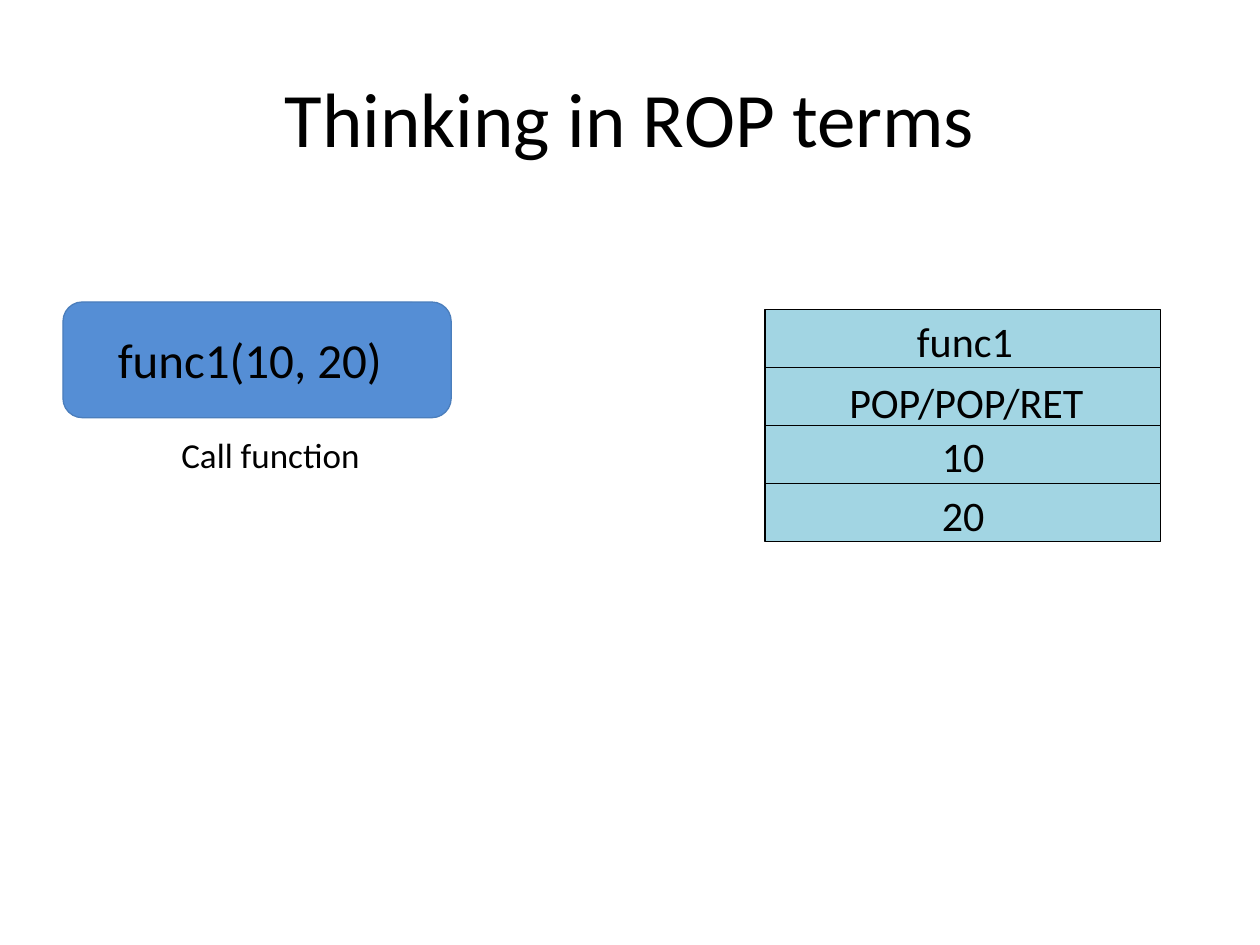
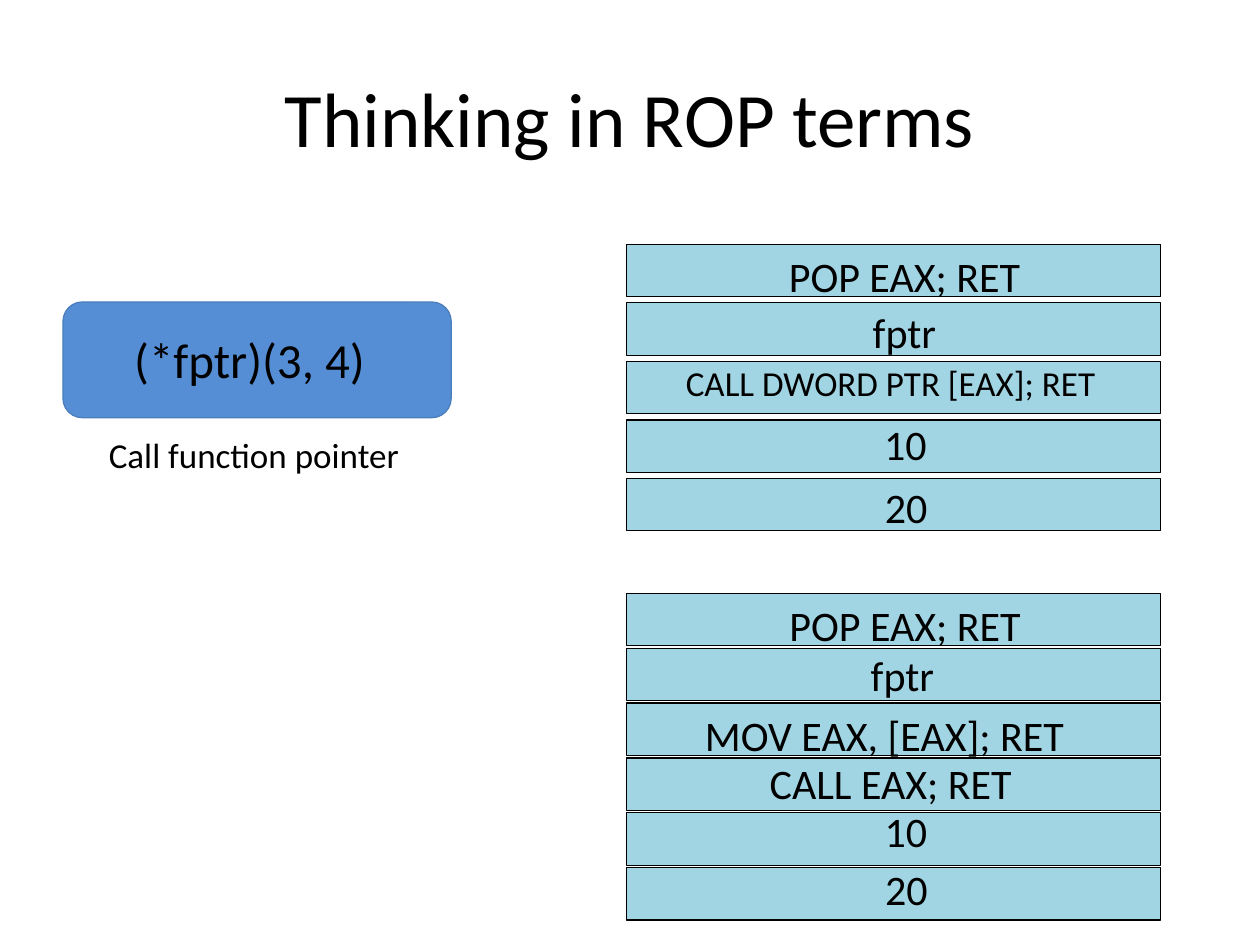
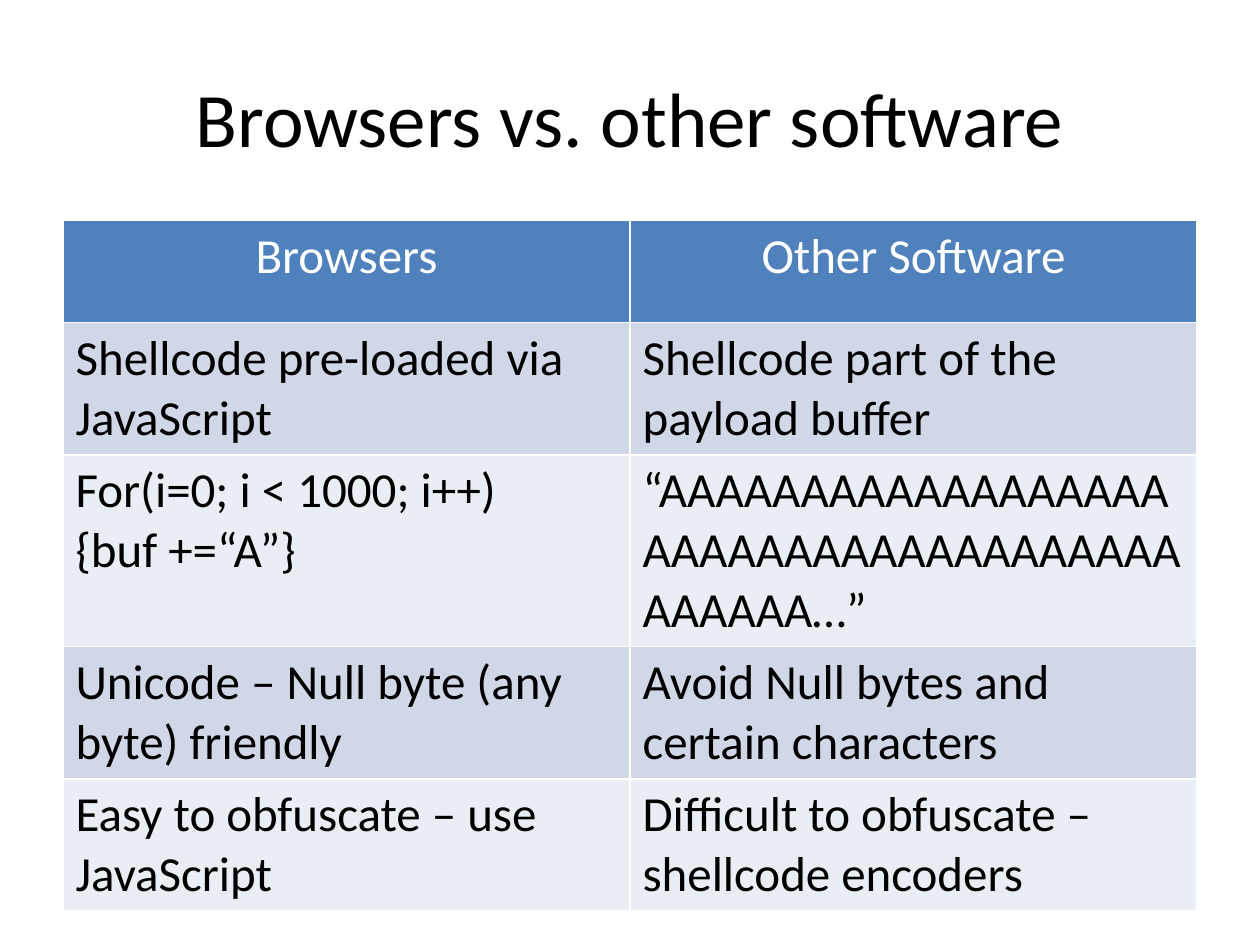
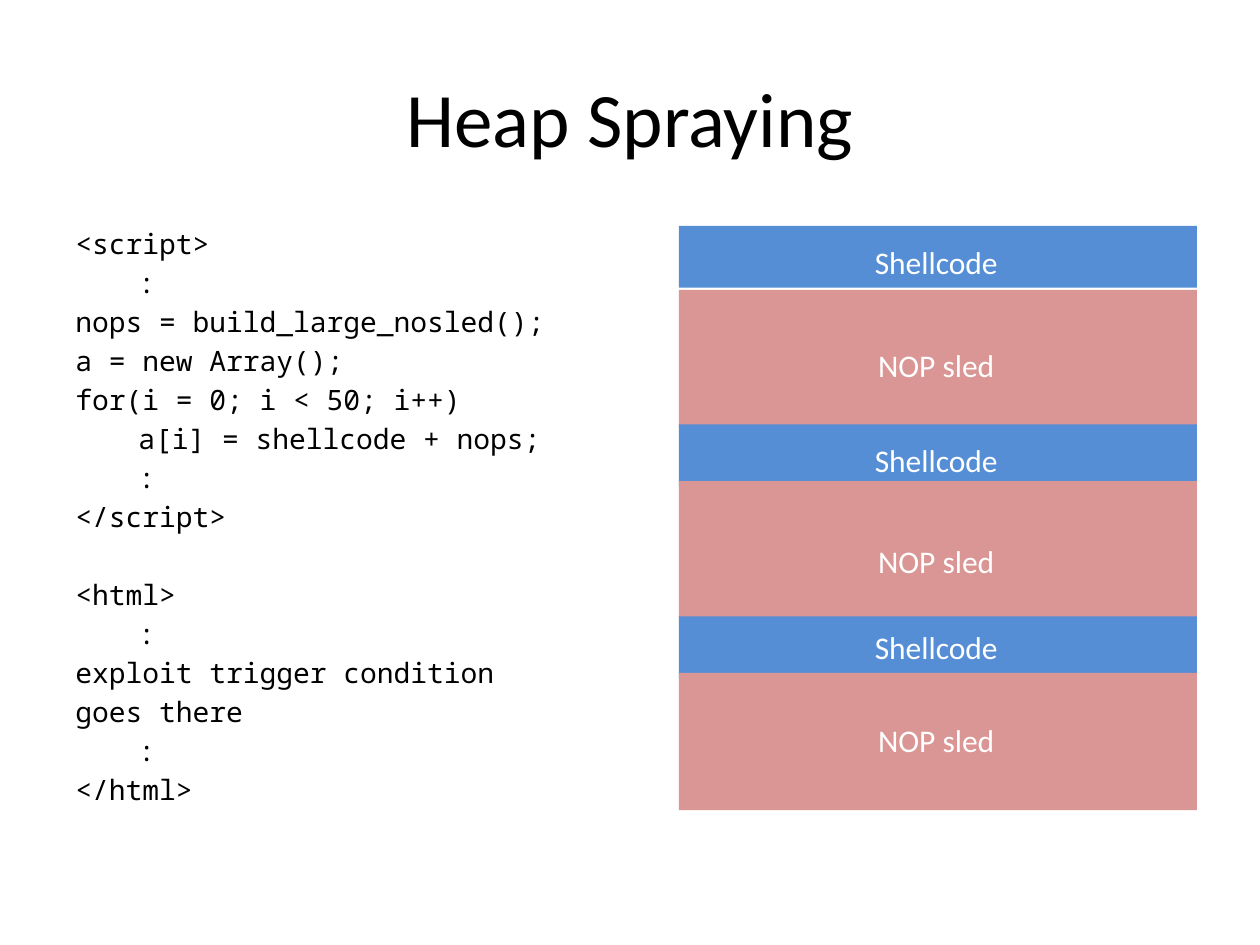
from lxml.etree import SubElement
from pptx import Presentation
from pptx.dml.color import RGBColor
from pptx.enum.shapes import MSO_SHAPE as SHAPE
from pptx.enum.text import MSO_ANCHOR as ANCHOR, MSO_AUTO_SIZE as AUTO, PP_ALIGN as ALIGN
from pptx.oxml.ns import qn
from pptx.util import Pt

# Shared style
BLACK = RGBColor(0x00, 0x00, 0x00)
WHITE = RGBColor(0xFF, 0xFF, 0xFF)
CYAN = RGBColor(0xA2, 0xD5, 0xE3)
BLUE = RGBColor(0x55, 0x8E, 0xD5)
BLUE_EDGE = RGBColor(0x4B, 0x7E, 0xBC)
PINK = RGBColor(0xD9, 0x96, 0x94)
HEADER = RGBColor(0x4F, 0x81, 0xBD)
BANDS = (RGBColor(0xD0, 0xD8, 0xE8), RGBColor(0xE9, 0xED, 0xF4))
FONT, CODE_FONT = "Calibri", "Noto Sans Mono"
MARGIN, CONTENT_TOP, CONTENT_WIDTH = 36, 126, 648

# Function calls and the stacks they become.
# call and caption: text, centre x, width
# stack entry: text, width, shift from the cell's centre, shift from its top, size
CALLS = [
    {
        "title": "Thinking in ROP terms",
        "call": ("func1(10, 20)", 142.7, 168),
        "caption": ("Call function", 154.6, 117),
        "stacks": [
            {"left": 437.2, "top": 176.9, "width": 226, "height": 33.15, "step": 33.15,
             "entries": [("func1", 70, 1.2, -0.2, 24), ("POP/POP/RET", 153, 2, 1.4, 24),
                         ("10", 39, 0.2, -0.7, 24), ("20", 39, 0.2, 0, 24)]},
        ],
    },
    {
        "title": "Thinking in ROP terms",
        "call": ("(*fptr)(3, 4)", 142.5, 148),
        "caption": ("Call function pointer", 145.1, 182),
        "stacks": [
            {"left": 358, "top": 139.6, "width": 305.3, "height": 30, "step": 33.45,
             "entries": [("POP EAX; RET", 201, 6.2, 0, 24), ("fptr", 69, 6.2, -1.7, 24),
                         ("CALL DWORD PTR [EAX]; RET", 333, -1.7, -3.5, 20),
                         ("10", 53, 6.7, -4.5, 24), ("20", 53, 7.2, -1.9, 24)]},
            {"left": 358, "top": 339.1, "width": 305.4, "height": 30, "step": 31.35,
             "entries": [("POP EAX; RET", 201, 6.5, 0, 24), ("fptr", 69, 5, -2.7, 24),
                         ("MOV EAX, [EAX]; RET", 333, -5.3, 0, 24),
                         ("CALL EAX; RET", 333, -1.7, -4.1, 24),
                         ("10", 53, 7, -8, 24), ("20", 53, 7.2, -6, 24)]},
        ],
    },
]

COMPARISON = [
    ("Browsers", "Other Software"),
    ("Shellcode pre-loaded via JavaScript", "Shellcode part of the payload buffer"),
    ("For(i=0; i < 1000; i++)\n{buf +=“A”}", "“" + "A" * 43 + "…”"),
    ("Unicode – Null byte (any byte) friendly", "Avoid Null bytes and certain characters"),
    ("Easy to obfuscate – use JavaScript", "Difficult to obfuscate – shellcode encoders"),
]
ROW_HEIGHTS = (58.2, 75.7, 109.6, 75.7, 75.3)

# Code listing by section: indent level, line
LISTING = [
    [(0, "<script>"), (1, ":"), (0, "nops = build_large_nosled();"),
     (0, "a = new Array();"), (0, "for(i = 0; i < 50; i++)"),
     (1, "a[i] = shellcode + nops;"), (1, ":"), (0, "</script>")],
    [(0, "<html>"), (1, ":"), (0, "exploit trigger condition"),
     (0, "goes there"), (1, ":"), (0, "</html>")],
]
LINE_GAP, SECTION_GAP, INDENT = 3.1, 25.6, 36

# Heap blocks: text, block top, label top
HEAP = [
    ("Shellcode", 129.1, 135.4), ("NOP sled", 165.6, 194.4),
    ("Shellcode", 242.5, 248.4), ("NOP sled", 275, 306),
    ("Shellcode", 352.2, 355.4), ("NOP sled", 384.5, 408.5),
]
HEAP_STYLE = {"Shellcode": (35.3, BLUE), "NOP sled": (78.5, PINK)}


def write(paragraph, text, size, color=BLACK, align=ALIGN.LEFT, font=FONT):
    paragraph.alignment = align
    run = paragraph.add_run()
    run.text = text
    run.font.name, run.font.size = font, Pt(size)
    run.font.color.rgb = color


def add_box(slide, kind, left, top, width, height, fill, edge=None):
    box = slide.shapes.add_shape(kind, Pt(left), Pt(top), Pt(width), Pt(height))
    box.shadow.inherit = False
    box.fill.solid()
    box.fill.fore_color.rgb = fill
    if edge is None:
        box.line.fill.background()
    else:
        box.line.color.rgb = edge
        box.line.width = Pt(0.75)


def add_label(slide, text, center, top, width, size, color=BLACK):
    label = slide.shapes.add_textbox(
        Pt(center - width / 2), Pt(top), Pt(width), Pt(size * 1.2 + 7.2))
    label.text_frame.word_wrap = False
    label.text_frame.auto_size = AUTO.SHAPE_TO_FIT_TEXT
    write(label.text_frame.paragraphs[0], text, size, color, ALIGN.CENTER)


def add_slide(deck, heading):
    slide = deck.slides.add_slide(deck.slide_layouts[6])
    title = slide.shapes.add_textbox(Pt(MARGIN), Pt(21.6), Pt(CONTENT_WIDTH), Pt(90))
    title.text_frame.word_wrap = True
    title.text_frame.vertical_anchor = ANCHOR.MIDDLE
    write(title.text_frame.paragraphs[0], heading, 44, align=ALIGN.CENTER)
    return slide


def add_stack(slide, stack):
    tops = [stack["top"] + i * stack["step"] for i in range(len(stack["entries"]))]
    for top in tops:
        add_box(slide, SHAPE.RECTANGLE, stack["left"], top,
                stack["width"], stack["height"], CYAN, BLACK)
    center = stack["left"] + stack["width"] / 2
    for top, (text, width, dx, dy, size) in zip(tops, stack["entries"]):
        add_label(slide, text, center + dx, top + dy, width, size)


def add_call_slide(deck, content):
    slide = add_slide(deck, content["title"])
    for stack in content["stacks"]:
        add_stack(slide, stack)
    add_box(slide, SHAPE.ROUNDED_RECTANGLE, MARGIN, 172.6, 221.8, 66.1, BLUE, BLUE_EDGE)
    for part, top, size in (("call", 185, 28), ("caption", 244, 20)):
        text, center, width = content[part]
        add_label(slide, text, center, top, width, size)


def set_borders(cell):
    properties = cell._tc.get_or_add_tcPr()
    for index, side in enumerate(("lnL", "lnR", "lnT", "lnB")):
        line = properties.makeelement(qn("a:" + side), {"w": str(Pt(1))})
        fill = SubElement(line, qn("a:solidFill"))
        SubElement(fill, qn("a:srgbClr"), val=str(WHITE))
        properties.insert(index, line)


def add_comparison_slide(deck):
    slide = add_slide(deck, "Browsers vs. other software")
    table = slide.shapes.add_table(
        len(COMPARISON), 2, Pt(MARGIN), Pt(CONTENT_TOP),
        Pt(CONTENT_WIDTH), Pt(sum(ROW_HEIGHTS))).table
    for r, (texts, height) in enumerate(zip(COMPARISON, ROW_HEIGHTS)):
        table.rows[r].height = Pt(height)
        is_header = r == 0
        for c, text in enumerate(texts):
            cell = table.cell(r, c)
            cell.fill.solid()
            cell.fill.fore_color.rgb = HEADER if is_header else BANDS[(r - 1) % 2]
            set_borders(cell)
            for i, line in enumerate(text.split("\n")):
                frame = cell.text_frame
                paragraph = frame.add_paragraph() if i else frame.paragraphs[0]
                write(paragraph, line, 28, WHITE if is_header else BLACK,
                      ALIGN.CENTER if is_header else ALIGN.LEFT)
                paragraph.runs[0].font.bold = False


def add_heap_slide(deck):
    slide = add_slide(deck, "Heap Spraying")
    # Code listing
    code = slide.shapes.add_textbox(
        Pt(MARGIN), Pt(CONTENT_TOP), Pt(CONTENT_WIDTH), Pt(356.4)).text_frame
    code.word_wrap = True
    paragraph = code.paragraphs[0]
    for s, section in enumerate(LISTING):
        for i, (level, line) in enumerate(section):
            if s or i:
                paragraph = code.add_paragraph()
            paragraph.space_before = Pt(SECTION_GAP if s and not i else LINE_GAP)
            write(paragraph, line, 16, font=CODE_FONT)
            paragraph._p.get_or_add_pPr().set("marL", str(Pt(level * INDENT)))
    # Heap memory
    for text, top, _ in HEAP:
        height, color = HEAP_STYLE[text]
        add_box(slide, SHAPE.RECTANGLE, 388, top, 296, height, color)
    for text, _, top in HEAP:
        add_label(slide, text, 535, top, 138.2, 18, WHITE)


def main():
    deck = Presentation()
    deck.slide_width, deck.slide_height = Pt(720), Pt(540)
    for content in CALLS:
        add_call_slide(deck, content)
    add_comparison_slide(deck)
    add_heap_slide(deck)
    deck.save("out.pptx")


if __name__ == "__main__":
    main()
